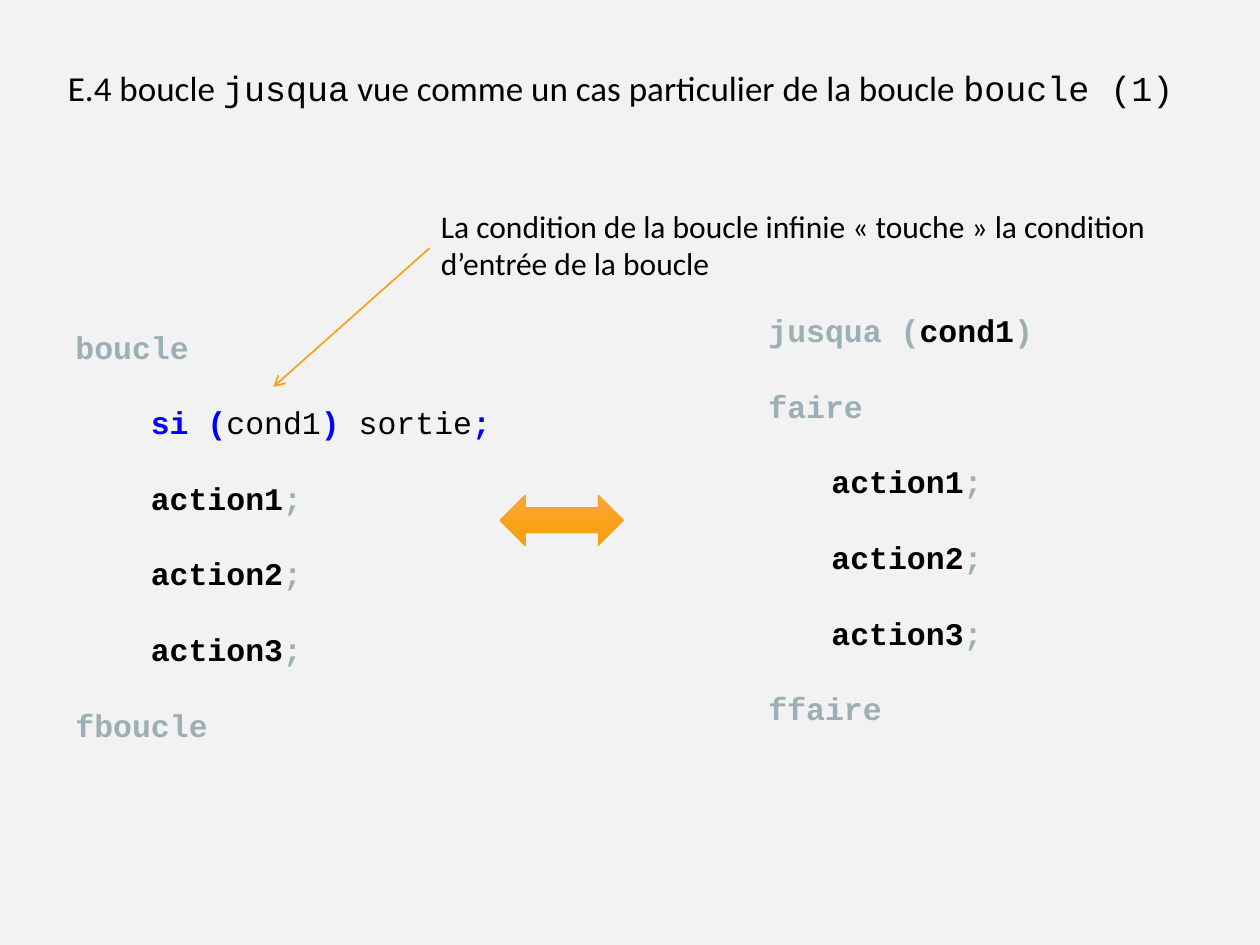
from copy import deepcopy

from lxml.etree import SubElement
from pptx import Presentation
from pptx.dml.color import RGBColor
from pptx.enum.shapes import MSO_CONNECTOR, MSO_SHAPE
from pptx.enum.text import MSO_AUTO_SIZE, PP_ALIGN
from pptx.oxml.ns import qn
from pptx.util import Cm, Pt

THEME = {
    "bg": "F2F2F2",
    "accent": "F6A21D",
    "gradient": [(0, "F7A942"), (0.5, "F9A31A"), (1, "F99E0F")],
    "styles": {
        "title": ("Calibri", 20, "000000", False),
        "title_code": ("Courier New", 20, "000000", False),
        "note": ("Calibri", 18, "000000", False),
        "frame": ("Courier New", 18, "9BAFB5", True),
        "key": ("Courier New", 18, "0000FF", True),
        "action": ("Courier New", 18, "000000", True),
        "plain": ("Courier New", 18, "000000", False),
    },
}

ACTIONS = [(1, [(f"action{i}", "action"), (";", "frame")]) for i in (1, 2, 3)]
BOUCLE = [
    (0, [("boucle", "frame")]),
    (1, [("si (", "key"), ("cond1", "plain"), (") ", "key"),
         ("sortie", "plain"), (";", "key")]),
    *ACTIONS,
    (0, [("fboucle", "frame")]),
]
JUSQUA = [
    (0, [("jusqua (", "frame"), ("cond1", "action"), (")", "frame")]),
    (0, [("faire", "frame")]),
    *ACTIONS,
    (0, [("ffaire", "frame")]),
]
TITLE = [(0, [
    ("E.4 boucle ", "title"), ("jusqua", "title_code"),
    (" vue comme un cas particulier de la boucle ", "title"),
    ("boucle (1)", "title_code"),
])]
NOTE = [(0, [("La condition de la boucle infinie « touche » la condition "
              "d’entrée de la boucle", "note")])]


def add_text(s, box, lines, wrap=True, indent=0, spacing=None, align=PP_ALIGN.LEFT):
    tf = s.shapes.add_textbox(*map(Cm, box)).text_frame
    tf.word_wrap = wrap
    tf.auto_size = MSO_AUTO_SIZE.SHAPE_TO_FIT_TEXT
    for i, (level, runs) in enumerate(lines):
        p = tf.add_paragraph() if i else tf.paragraphs[0]
        p.alignment = align
        if spacing:
            p.line_spacing = spacing
        if level:
            p._p.get_or_add_pPr().set("marL", str(Cm(level * indent)))
        for text, style in runs:
            r = p.add_run()
            r.text = text
            name, size, color, bold = THEME["styles"][style]
            r.font.name, r.font.size, r.font.bold = name, Pt(size), bold
            r.font.color.rgb = RGBColor.from_string(color)
    return tf


def add_double_arrow(s, box):
    sp = s.shapes.add_shape(MSO_SHAPE.LEFT_RIGHT_ARROW, *map(Cm, box))
    sp.shadow.inherit = False
    sp.fill.gradient()
    sp.fill.gradient_angle = 270
    stops = sp._element.spPr.find(qn("a:gradFill")).find(qn("a:gsLst"))
    stops.insert(1, deepcopy(stops[0]))
    for stop, (position, color) in zip(sp.fill.gradient_stops, THEME["gradient"]):
        stop.position = position
        stop.color.rgb = RGBColor.from_string(color)
    sp.line.color.rgb = RGBColor.from_string(THEME["accent"])
    sp.line.width = Pt(0.5)


def add_pointer(s, ends):
    sp = s.shapes.add_connector(MSO_CONNECTOR.STRAIGHT, *map(Cm, ends))
    sp.line.color.rgb = RGBColor.from_string(THEME["accent"])
    sp.line.width = Pt(1)
    SubElement(sp.line._get_or_add_ln(), qn("a:tailEnd"), type="arrow")
    SubElement(sp._element.spPr, qn("a:effectLst"))


def main():
    """Build the slide comparing the boucle and jusqua loops."""
    prs = Presentation()
    prs.slide_width, prs.slide_height = Cm(25.4), Cm(19.05)
    s = prs.slides.add_slide(prs.slide_layouts[6])
    s.background.fill.solid()
    s.background.fill.fore_color.rgb = RGBColor.from_string(THEME["bg"])

    add_text(s, (1.27, 5.72, 8.94, 9.3), BOUCLE, wrap=False, indent=1.52, spacing=2)
    tf = add_text(s, (15.24, 6.15, 8.23, 8.59), JUSQUA, indent=1.27, spacing=2)
    tf.paragraphs[0].line_spacing = 1
    add_text(s, (0.97, 1.22, 23.09, 1.12), TITLE, wrap=False, align=PP_ALIGN.CENTER)
    add_double_arrow(s, (10.08, 9.98, 2.49, 1.02))
    add_pointer(s, (8.66, 5, 5.51, 7.8))
    add_text(s, (8.64, 4.04, 15.14, 1.8), NOTE)
    prs.save("out.pptx")


if __name__ == "__main__":
    main()
